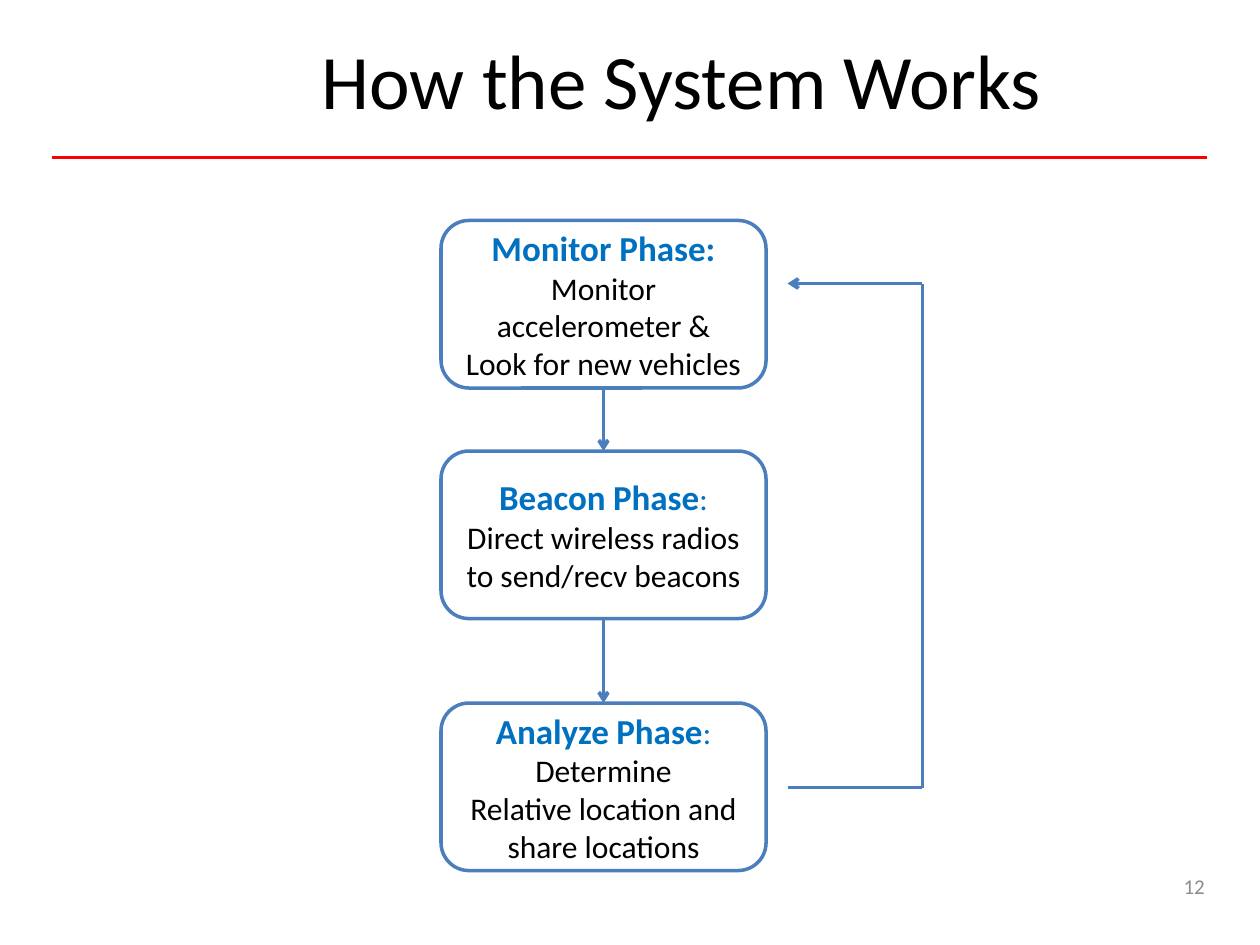
"""Build the slide that shows the three phases of the system as a loop."""
from lxml import etree
from pptx import Presentation
from pptx.dml.color import RGBColor
from pptx.enum.shapes import MSO_CONNECTOR, MSO_SHAPE
from pptx.enum.text import MSO_ANCHOR, PP_ALIGN
from pptx.oxml.ns import qn
from pptx.util import Inches, Pt

STRAIGHT = MSO_CONNECTOR.STRAIGHT
ROUND = MSO_SHAPE.ROUNDED_RECTANGLE
MIDDLE = MSO_ANCHOR.MIDDLE
CENTER, RIGHT = PP_ALIGN.CENTER, PP_ALIGN.RIGHT
TOP, BOTTOM = 0, 2

FONT = "Calibri"
COLORS = {"text": "000000", "head": "0070C0", "line": "4B7EBC",
          "rule": "FF0000", "page": "8C8C8C"}

LEFT, WIDTH, HEIGHT = 3.5, 2.58, 1.33
NEAR, FAR = 6.25, 7.32
UPPER, LOWER = 2.25, 6.25

HEAD = ("head", 20, True)
JOIN = ("head", 18, False)
BODY = ("text", 18, False)
PHASES = [
    (1.75, [[("Monitor Phase:", HEAD)],
            [("Monitor accelerometer &", BODY)],
            [("Look for new vehicles", BODY)]]),
    (3.58, [[("Beacon", HEAD), (" ", JOIN), ("Phase", HEAD), (":", JOIN)],
            [("Direct wireless radios to send/recv beacons", BODY)]]),
    (5.58, [[("Analyze", HEAD), (" ", JOIN), ("Phase", HEAD), (":", JOIN)],
            [("Determine", BODY)],
            [("Relative location and share locations", BODY)]]),
]


def color(name):
    """Return the named color."""
    return RGBColor.from_string(COLORS[name])


def write(shape, lines, align):
    """Fill a shape with lines made of styled runs."""
    frame = shape.text_frame
    frame.word_wrap = True
    frame.vertical_anchor = MIDDLE
    for i, line in enumerate(lines):
        para = frame.add_paragraph() if i else frame.paragraphs[0]
        para.alignment = align
        for text, (tint, size, bold) in line:
            run = para.add_run()
            run.text = text
            run.font.name = FONT
            run.font.size = Pt(size)
            run.font.bold = bold
            run.font.color.rgb = color(tint)


def add_label(slide, area, text, style, align):
    """Add a text box with one run."""
    box = slide.shapes.add_textbox(*map(Inches, area))
    write(box, [[(text, style)]], align)


def add_phase(slide, top, lines):
    """Add a rounded box for one phase."""
    box = slide.shapes.add_shape(ROUND, Inches(LEFT), Inches(top),
                                 Inches(WIDTH), Inches(HEIGHT))
    box.shadow.inherit = False
    box.fill.background()
    box.line.color.rgb = color("line")
    box.line.width = Pt(2)
    write(box, lines, CENTER)
    return box


def add_line(slide, start, end, tint="line", width=2, arrow=False):
    """Add a straight line, with an arrowhead at its end if asked."""
    line = slide.shapes.add_connector(STRAIGHT, *map(Inches, start + end))
    line.line.color.rgb = color(tint)
    line.line.width = Pt(width)
    if arrow:
        tail = etree.SubElement(line.line._get_or_add_ln(), qn("a:tailEnd"))
        tail.set("type", "arrow")
    etree.SubElement(line._element.spPr, qn("a:effectLst"))
    return line


def link(slide, upper, lower):
    """Join two boxes with a downward arrow."""
    line = add_line(slide, (0, 0), (0, 0), arrow=True)
    line.begin_connect(upper, BOTTOM)
    line.end_connect(lower, TOP)


def main():
    """Build and save the slide."""
    deck = Presentation()
    deck.slide_width, deck.slide_height = Inches(10), Inches(7.5)
    slide = deck.slides.add_slide(deck.slide_layouts[6])

    add_line(slide, (0.41, 1.25), (9.58, 1.25), "rule", 1.5)
    add_label(slide, (1.45, 0, 7.92, 1.25), "How the System Works",
              ("text", 44, False), CENTER)
    add_label(slide, (8.08, 6.83, 1.58, 0.4), "12",
              ("page", 12, False), RIGHT)

    boxes = [add_phase(slide, top, lines) for top, lines in PHASES]
    for upper, lower in zip(boxes, boxes[1:]):
        link(slide, upper, lower)

    add_line(slide, (FAR, UPPER), (NEAR, UPPER), arrow=True)
    add_line(slide, (FAR, UPPER), (FAR, LOWER))
    add_line(slide, (NEAR, LOWER), (FAR, LOWER))

    deck.save("out.pptx")


if __name__ == "__main__":
    main()
